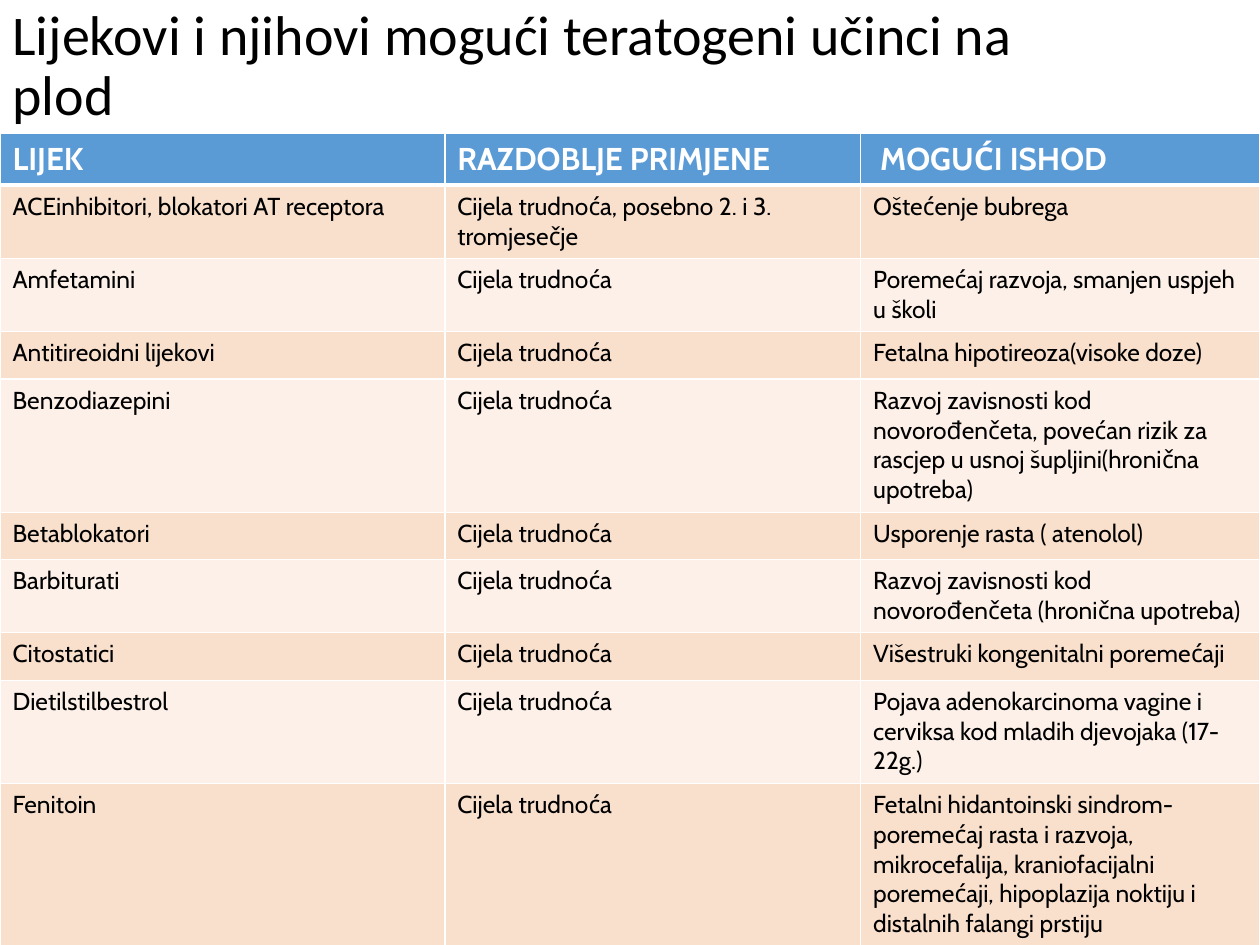
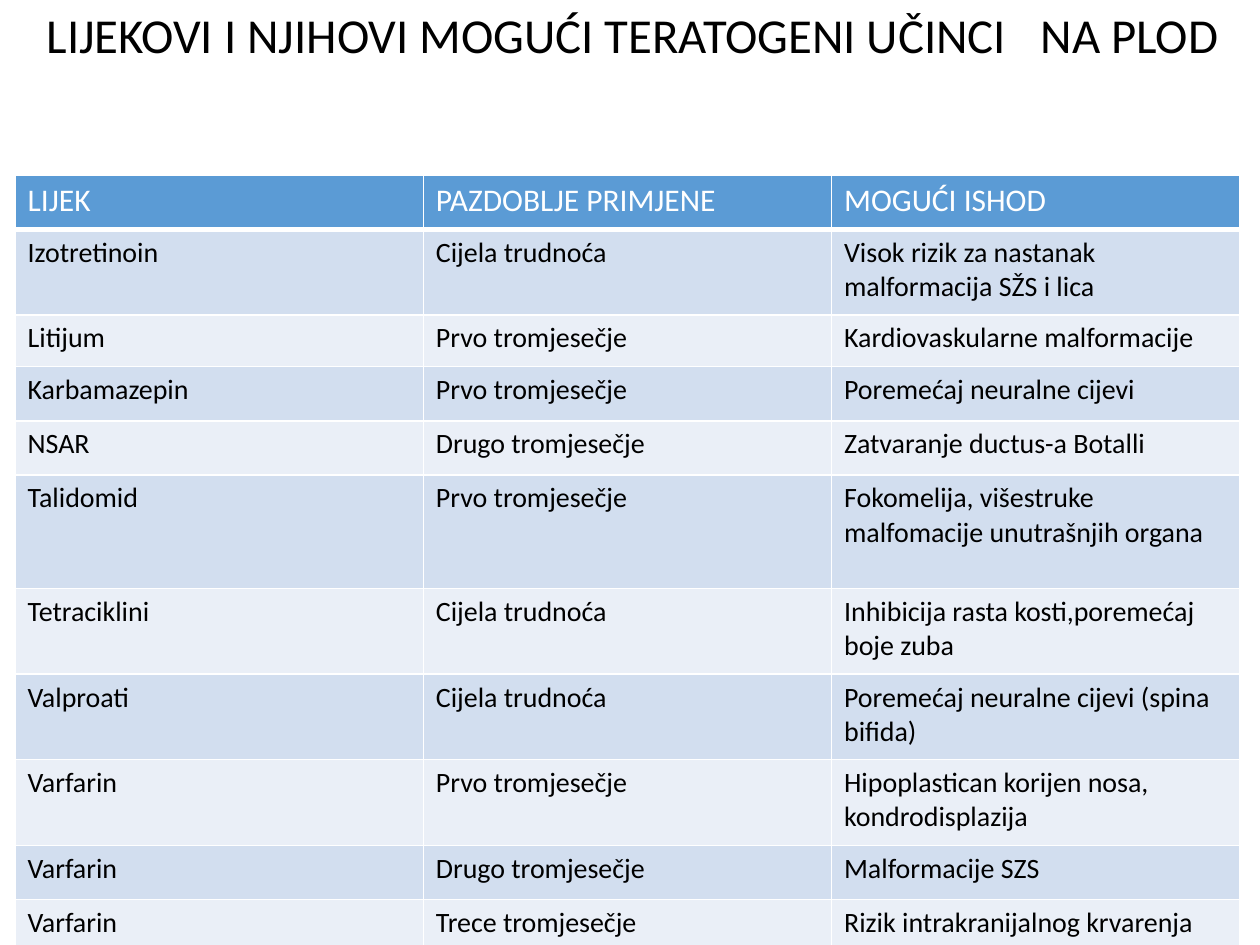
"""Build two slides listing drugs and their possible teratogenic effects."""
from lxml import etree
from pptx import Presentation
from pptx import util as u
from pptx.dml.color import RGBColor
from pptx.enum import text
from pptx.oxml import ns

WHITE, BLACK, HEADER = "FFFFFF", "000000", "5B9BD5"
PEACH, BLUE = ("F9E0CD", "FCF0E8"), ("D2DEEF", "EAEFF7")
WHOLE, FIRST, SECOND = "Cijela trudnoća", "Prvo tromjesečje", "Drugo tromjesečje"

DRUGS_A_TO_F = [
    ("LIJEK", "RAZDOBLJE PRIMJENE", " MOGUĆI ISHOD"),
    ("ACEinhibitori, blokatori AT receptora",
     "Cijela trudnoća, posebno 2. i 3. tromjesečje", "Oštećenje bubrega"),
    ("Amfetamini", WHOLE, "Poremećaj razvoja, smanjen uspjeh u školi"),
    ("Antitireoidni lijekovi", WHOLE, "Fetalna hipotireoza(visoke doze)"),
    ("Benzodiazepini", WHOLE,
     "Razvoj zavisnosti kod novorođenčeta, povećan rizik za rascjep u usnoj "
     "šupljini(hronična upotreba)"),
    ("Betablokatori", WHOLE, "Usporenje rasta ( atenolol)"),
    ("Barbiturati", WHOLE, "Razvoj zavisnosti kod novorođenčeta (hronična upotreba)"),
    ("Citostatici", WHOLE, "Višestruki kongenitalni poremećaji"),
    ("Dietilstilbestrol", WHOLE,
     "Pojava adenokarcinoma vagine i cerviksa kod mladih djevojaka (17-22g.)"),
    ("Fenitoin", WHOLE,
     "Fetalni hidantoinski sindrom-poremećaj rasta i razvoja, mikrocefalija, "
     "kraniofacijalni poremećaji, hipoplazija noktiju i distalnih falangi prstiju"),
]
DRUGS_I_TO_V = [
    ("LIJEK", "PAZDOBLJE PRIMJENE", "MOGUĆI ISHOD"),
    ("Izotretinoin", WHOLE, "Visok rizik za nastanak malformacija SŽS i lica"),
    ("Litijum", FIRST, "Kardiovaskularne malformacije"),
    ("Karbamazepin", FIRST, "Poremećaj neuralne cijevi"),
    ("NSAR", SECOND, "Zatvaranje ductus-a Botalli"),
    ("Talidomid", FIRST, "Fokomelija, višestruke malfomacije unutrašnjih organa"),
    ("Tetraciklini", WHOLE, "Inhibicija rasta kosti,poremećaj boje zuba"),
    ("Valproati", WHOLE, "Poremećaj neuralne cijevi (spina bifida)"),
    ("Varfarin", FIRST, "Hipoplastican korijen nosa, kondrodisplazija"),
    ("Varfarin", SECOND, "Malformacije SZS"),
    ("Varfarin", "Trece tromjesečje", "Rizik intrakranijalnog krvarenja"),
]


def color(value):
    """Return the colour for a hex string."""
    return RGBColor.from_string(value)


def write(p, content, font="Calibri", size=16, fill=BLACK, bold=False):
    """Put formatted text in a paragraph."""
    p.text = content
    for r in p.runs:
        r.font.name, r.font.size, r.font.bold = font, u.Pt(size), bold
        r.font.color.rgb = color(fill)


def add_tab(p, position):
    """Add a left tab stop, in inches from the text edge."""
    tabs = etree.SubElement(p._p.get_or_add_pPr(), ns.qn("a:tabLst"))
    etree.SubElement(tabs, ns.qn("a:tab"), pos=str(u.Inches(position)), algn="l")


def add_title(s, content, size, height, anchor, left=0.1, top=0.05, tab=None):
    """Add a title across the top of the slide."""
    tf = s.shapes.add_textbox(0, 0, u.Inches(10), u.Inches(height)).text_frame
    tf.word_wrap, tf.vertical_anchor = True, anchor
    tf.margin_left, tf.margin_top = u.Inches(left), u.Inches(top)
    p = tf.paragraphs[0]
    p.line_spacing = 0.9
    if tab:
        add_tab(p, tab)
    write(p, content, size=size)


def add_borders(cell, top=1, bottom=1):
    """Draw white borders with widths in points."""
    widths = {"lnL": 1, "lnR": 1, "lnT": top, "lnB": bottom}
    for side, width in widths.items():
        ln = etree.SubElement(cell._tc.get_or_add_tcPr(), ns.qn(f"a:{side}"),
                              w=str(u.Pt(width)))
        fill = etree.SubElement(ln, ns.qn("a:solidFill"))
        etree.SubElement(fill, ns.qn("a:srgbClr"), val=WHITE)


def add_drug_table(s, rows, left, top, widths, heights, bands, font, size,
                   header_bold=False, rule=1):
    """Add a banded table whose first row is the header."""
    table = s.shapes.add_table(
        len(rows), len(widths), u.Inches(left), u.Inches(top),
        u.Inches(sum(widths)), u.Inches(sum(heights))).table
    for column, width in zip(table.columns, widths):
        column.width = u.Inches(width)
    for i, (row, height) in enumerate(zip(rows, heights)):
        table.rows[i].height = u.Inches(height)
        header = i == 0
        for j, content in enumerate(row):
            cell = table.cell(i, j)
            add_borders(cell, top=rule if i == 1 else 1, bottom=3 if header else 1)
            cell.fill.solid()
            cell.fill.fore_color.rgb = color(HEADER if header else bands[(i - 1) % 2])
            write(cell.text_frame.paragraphs[0], content, font=font,
                  size=18 if header else size, fill=WHITE if header else BLACK,
                  bold=header and header_bold)


def main():
    """Build and save the presentation."""
    prs = Presentation()
    prs.slide_width, prs.slide_height = u.Inches(10), u.Inches(7.5)
    blank = prs.slide_layouts[6]

    s = prs.slides.add_slide(blank)
    add_title(s, "Lijekovi i njihovi mogući teratogeni učinci na\vplod", 32, 1.07,
              text.MSO_ANCHOR.MIDDLE)
    add_drug_table(s, DRUGS_A_TO_F, 0, 1.06, [3.53, 3.3, 3.17],
                   [0.41, 0.58, 0.58, 0.38, 1.06, 0.37, 0.58, 0.38, 0.82, 1.3],
                   PEACH, "Cabin", 14, header_bold=True, rule=3)

    s = prs.slides.add_slide(blank)
    add_title(s, "LIJEKOVI I NJIHOVI MOGUĆI TERATOGENI UČINCI\tNA PLOD", 27.9, 1.09,
              text.MSO_ANCHOR.TOP, left=0.37, top=0.09, tab=7.89)
    add_drug_table(s, DRUGS_I_TO_V, 0.12, 1.39, [3.24] * 3,
                   [0.43, 0.68, 0.41, 0.43, 0.43, 0.9, 0.68, 0.68, 0.68, 0.43, 0.39],
                   BLUE, "Calibri", 16)
    prs.save("out.pptx")


if __name__ == "__main__":
    main()
